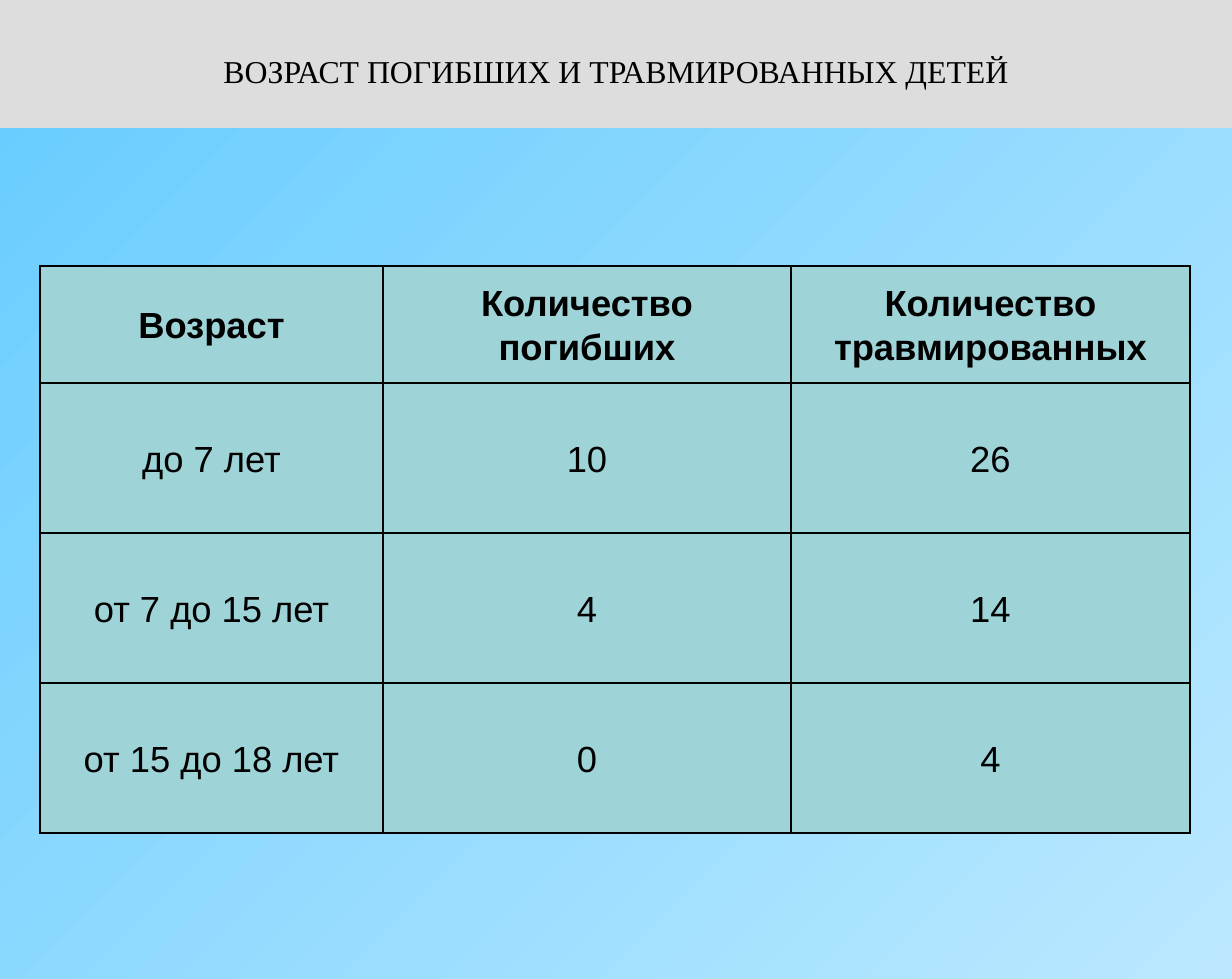
from dataclasses import dataclass

from lxml.etree import SubElement
from pptx import Presentation
from pptx.dml.color import RGBColor
from pptx.enum.shapes import MSO_SHAPE as Shape
from pptx.enum.text import MSO_ANCHOR as Anchor, PP_ALIGN as Align
from pptx.oxml.ns import qn
from pptx.util import Emu, Pt

EMU_PER_PX = 914400 / 109
SLIDE_WIDTH, SLIDE_HEIGHT = 1232, 979
BLACK, BAND_GREY, CELL_TEAL = "000000", "DDDDDD", "9ED3D7"
SKY_COLOURS = ("66CCFF", "BBE8FF")

TABLE_LEFT, TABLE_TOP = 40, 266
COLUMN_WIDTHS = (343, 408, 399)
HEADER_HEIGHT, ROW_HEIGHT = 117, 150
HEADINGS = ("Возраст", "Количество погибших", "Количество травмированных")


@dataclass(frozen=True)
class AgeGroup:
    age: str
    killed: int
    injured: int


AGE_GROUPS = (
    AgeGroup("до 7 лет", 10, 26),
    AgeGroup("от 7 до 15 лет", 4, 14),
    AgeGroup("от 15 до 18 лет", 0, 4),
)


def px(length: int) -> Emu:
    return Emu(round(length * EMU_PER_PX))


def colour(code: str) -> RGBColor:
    return RGBColor.from_string(code)


def write(frame, text: str, *, font: str, size: int, bold: bool = False,
          spacing: float = 1.0) -> None:
    """Put one centred black paragraph into a text frame."""
    line = frame.paragraphs[0]
    line.alignment = Align.CENTER
    line.line_spacing = spacing
    run = line.add_run()
    run.text = text
    run.font.name = font
    run.font.size = Pt(size)
    run.font.bold = bold
    run.font.color.rgb = colour(BLACK)


def paint_background(slide) -> None:
    sky = slide.background.fill
    sky.gradient()
    sky.gradient_angle = 315
    for stop, code in zip(sky.gradient_stops, SKY_COLOURS):
        stop.color.rgb = colour(code)


def add_title_band(slide) -> None:
    band = slide.shapes.add_shape(Shape.RECTANGLE, 0, 0, px(SLIDE_WIDTH), px(128))
    band.shadow.inherit = False
    band.fill.solid()
    band.fill.fore_color.rgb = colour(BAND_GREY)
    band.line.fill.background()
    frame = band.text_frame
    frame.word_wrap = True
    frame.vertical_anchor = Anchor.MIDDLE
    frame.margin_left = frame.margin_right = px(13)
    frame.margin_top, frame.margin_bottom = px(15), px(2)
    write(frame, "ВОЗРАСТ ПОГИБШИХ И ТРАВМИРОВАННЫХ ДЕТЕЙ",
          font="Times New Roman", size=21)


def add_borders(cell) -> None:
    properties = cell._tc.get_or_add_tcPr()
    for side in ("a:lnL", "a:lnR", "a:lnT", "a:lnB"):
        border = SubElement(properties, qn(side), w=str(Pt(1)))
        fill = SubElement(border, qn("a:solidFill"))
        SubElement(fill, qn("a:srgbClr"), val=BLACK)


def fill_cell(cell, text: str, *, bold: bool) -> None:
    add_borders(cell)
    cell.fill.solid()
    cell.fill.fore_color.rgb = colour(CELL_TEAL)
    cell.vertical_anchor = Anchor.MIDDLE
    cell.margin_left = cell.margin_right = px(8)
    cell.margin_top = cell.margin_bottom = 0
    write(cell.text_frame, text, font="Arial", size=24, bold=bold, spacing=1.07)


def add_age_table(slide) -> None:
    rows = [HEADINGS] + [(g.age, str(g.killed), str(g.injured)) for g in AGE_GROUPS]
    heights = [HEADER_HEIGHT] + [ROW_HEIGHT] * len(AGE_GROUPS)
    table = slide.shapes.add_table(
        len(rows), len(HEADINGS), px(TABLE_LEFT), px(TABLE_TOP),
        px(sum(COLUMN_WIDTHS)), px(sum(heights))).table
    table.first_row = table.horz_banding = False
    for column, width in zip(table.columns, COLUMN_WIDTHS):
        column.width = px(width)
    for row_index, (values, height) in enumerate(zip(rows, heights)):
        table.rows[row_index].height = px(height)
        for column_index, text in enumerate(values):
            fill_cell(table.cell(row_index, column_index), text, bold=row_index == 0)


def main() -> None:
    deck = Presentation()
    deck.slide_width, deck.slide_height = px(SLIDE_WIDTH), px(SLIDE_HEIGHT)
    slide = deck.slides.add_slide(deck.slide_layouts[6])
    paint_background(slide)
    add_title_band(slide)
    add_age_table(slide)
    deck.save("out.pptx")


if __name__ == "__main__":
    main()
